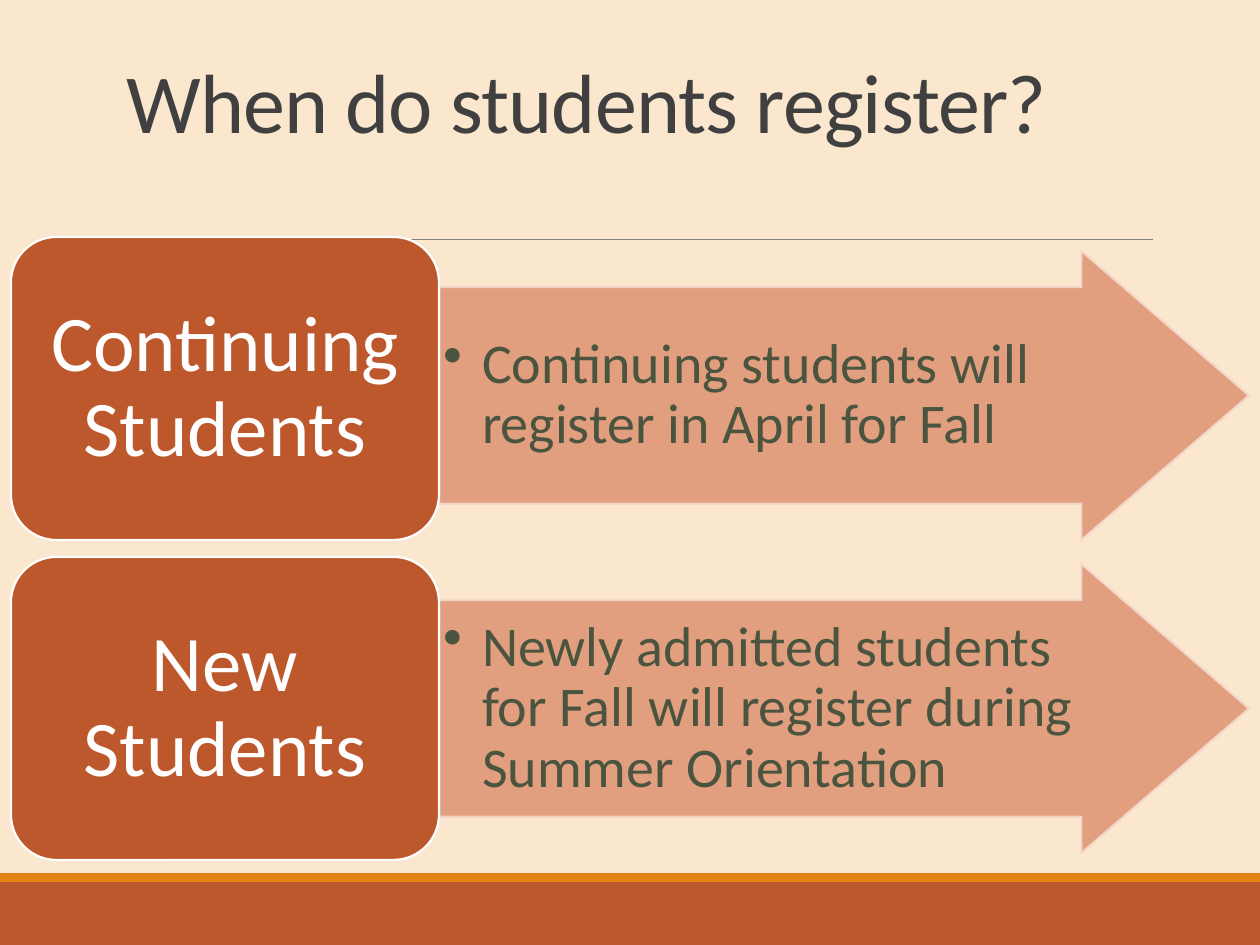
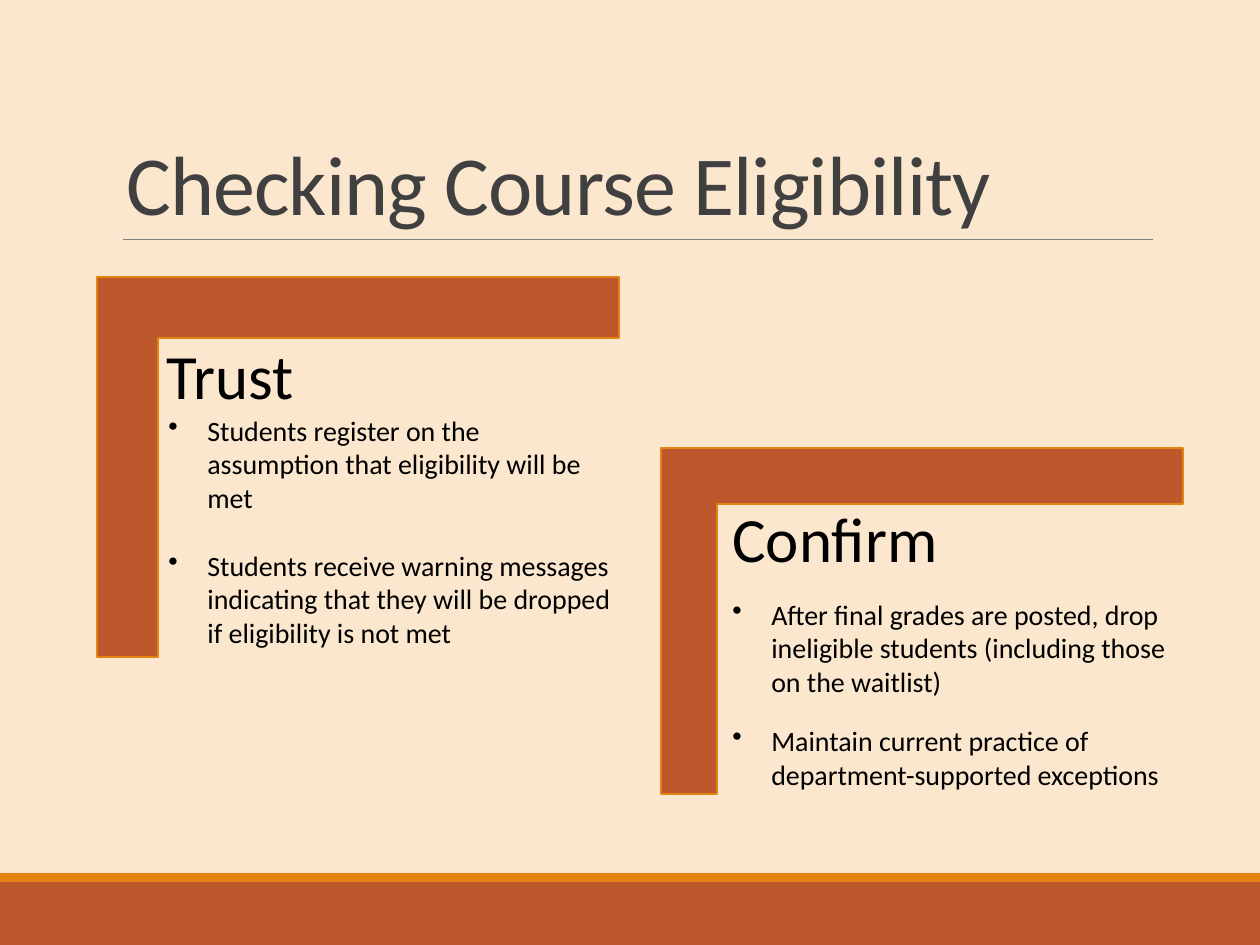
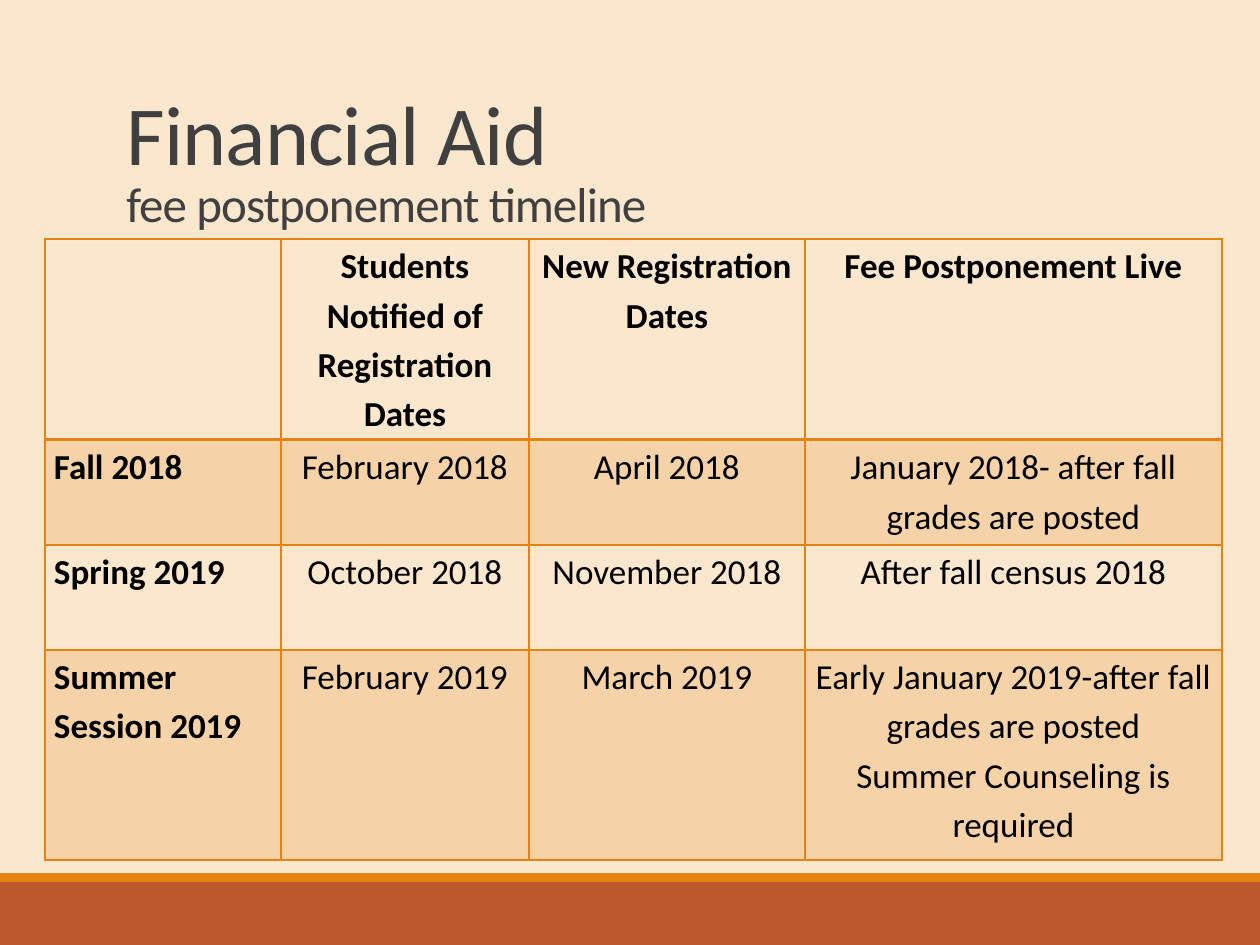
from dataclasses import dataclass

from lxml.etree import SubElement
from pptx import Presentation
from pptx.dml.color import RGBColor
from pptx.enum.shapes import MSO_CONNECTOR, MSO_SHAPE as Shape
from pptx.enum.text import MSO_ANCHOR as Anchor, PP_ALIGN as Align
from pptx.oxml import parse_xml
from pptx.oxml.ns import nsdecls, qn
from pptx.util import Emu, Pt

PX_PER_INCH = 126


def px(length):
    return Emu(round(length * 914400 / PX_PER_INCH))


@dataclass(frozen=True)
class Theme:
    font: str = "Calibri"
    paper: str = "FBE6CE"
    rust: str = "BD582C"
    orange: str = "E48312"
    rule: str = "808080"
    arrow: str = "E09878"
    arrow_edge: str = "F5D9CC"
    arrow_text: str = "4A543E"
    title: str = "404040"
    black: str = "000000"
    white: str = "FFFFFF"
    title_size: int = 48
    subtitle_size: int = 28
    label_size: int = 45
    arrow_size: int = 32
    heading_size: int = 36
    body_size: int = 16
    table_size: int = 20


def set_alpha(element, percent):
    for color in element.iter(qn("a:srgbClr")):
        SubElement(color, qn("a:alpha")).set("val", str(percent * 1000))


class Painter:
    def __init__(self, deck, theme):
        self.deck, self.theme, self.page = deck, theme, None

    # Slide frame: background, footer bands and title rule
    def new_page(self):
        theme = self.theme
        self.page = self.deck.slides.add_slide(self.deck.slide_layouts[6])
        self.page.background.fill.solid()
        self.page.background.fill.fore_color.rgb = RGBColor.from_string(theme.paper)
        self.shape(Shape.RECTANGLE, 0, 882, 1260, 63, theme.rust)
        self.shape(Shape.RECTANGLE, 0, 873, 1260, 9, theme.orange)
        self.line(123, 239, 1153, 239, theme.rule, 0.5)

    def shape(self, kind, left, top, width, height, fill, edge=None, adjust=()):
        shape = self.page.shapes.add_shape(kind, px(left), px(top), px(width), px(height))
        shape.shadow.inherit = False
        for index, value in enumerate(adjust):
            shape.adjustments[index] = value
        shape.fill.solid()
        shape.fill.fore_color.rgb = RGBColor.from_string(fill)
        if edge:
            shape.line.color.rgb = RGBColor.from_string(edge)
            shape.line.width = Pt(1.25)
        else:
            shape.line.fill.background()
        return shape

    def line(self, x1, y1, x2, y2, color, width):
        line = self.page.shapes.add_connector(
            MSO_CONNECTOR.STRAIGHT, px(x1), px(y1), px(x2), px(y2))
        line.line.color.rgb = RGBColor.from_string(color)
        line.line.width = Pt(width)
        SubElement(line.element.spPr, qn("a:effectLst"))

    # Text helpers
    def span(self, para, text, size, color, bold=False, tracking=0):
        span = para.add_run()
        span.text = text
        span.font.name, span.font.size, span.font.bold = self.theme.font, Pt(size), bold
        span.font.color.rgb = RGBColor.from_string(color)
        if tracking:
            span.font._element.set("spc", str(tracking))

    def bullet(self, para):
        indent = px(39)
        props = para._p.get_or_add_pPr()
        props.set("marL", str(indent))
        props.set("indent", str(-indent))
        SubElement(props, qn("a:buChar")).set("char", "•")

    def inset(self, frame, left, top, right, bottom):
        frame.margin_left, frame.margin_top = px(left), px(top)
        frame.margin_right, frame.margin_bottom = px(right), px(bottom)

    def text_box(self, left, top, width, height):
        box = self.page.shapes.add_textbox(px(left), px(top), px(width), px(height))
        box.text_frame.word_wrap = True
        return box.text_frame

    def title(self, text, subtitle=None, bottom=239):
        theme, top = self.theme, 39
        frame = self.text_box(114, top, 1040, bottom - top)
        frame.vertical_anchor = Anchor.BOTTOM
        para = frame.paragraphs[0]
        para.line_spacing = 0.85
        self.span(para, text, theme.title_size, theme.title, tracking=-50)
        if subtitle:
            para.add_line_break()
            self.span(para, subtitle, theme.subtitle_size, theme.title, tracking=-50)

    def heading(self, text, left, top):
        para = self.text_box(left, top, 260, 89).paragraphs[0]
        self.span(para, text, self.theme.heading_size, self.theme.black)

    def bullets(self, items, left, top, width, height, gap):
        frame = self.text_box(left, top, width, height)
        for index, item in enumerate(items):
            para = frame.add_paragraph() if index else frame.paragraphs[0]
            para.space_before = Pt(gap if index else 0)
            self.bullet(para)
            self.span(para, item, self.theme.body_size, self.theme.black)

    # A label card with an arrow pointing away from it
    def arrow_row(self, label, detail, card_top, arrow_top):
        theme = self.theme
        arrow = self.shape(Shape.RIGHT_ARROW, 439, arrow_top, 810, 289,
                           theme.arrow, theme.arrow_edge, (0.75, 0.58))
        set_alpha(arrow.element.spPr, 90)
        card = self.shape(Shape.ROUNDED_RECTANGLE, 11, card_top, 428, 303,
                          theme.rust, theme.white, (0.15,))
        self.inset(arrow.text_frame, 4, 0, 0, 0)
        self.inset(card.text_frame, 20, 13, 20, 13)
        for part, text, size, color, align in (
                (arrow, detail, theme.arrow_size, theme.arrow_text, Align.LEFT),
                (card, label, theme.label_size, theme.white, Align.CENTER)):
            part.text_frame.word_wrap = True
            part.text_frame.vertical_anchor = Anchor.MIDDLE
            para = part.text_frame.paragraphs[0]
            para.alignment, para.line_spacing = align, 0.9
            if part is arrow:
                self.bullet(para)
            self.span(para, text, size, color)

    # An L bracket, given by its box after the quarter turn
    def bracket(self, left, top, width, height):
        shift = (width - height) / 2
        corner = self.shape(Shape.CORNER, left + shift, top - shift, height, width,
                            self.theme.rust, self.theme.orange, (0.161, 0.161))
        corner.rotation = 90

    def table(self, rows, left, top, widths, heights):
        table = self.page.shapes.add_table(
            len(rows), len(widths), px(left), px(top),
            px(sum(widths)), px(sum(heights))).table
        table.first_row = table.horz_banding = False
        for column, width in zip(table.columns, widths):
            column.width = px(width)
        for row, height in zip(table.rows, heights):
            row.height = px(height)
        for r, row in enumerate(rows):
            for c, text in enumerate(row):
                self.cell(table.cell(r, c), text, r, c)

    def cell(self, cell, text, r, c):
        theme = self.theme
        self.inset(cell, 9, 0, 9, 0)
        props = cell._tc.get_or_add_tcPr()
        if r % 2:
            cell.fill.solid()
            cell.fill.fore_color.rgb = RGBColor.from_string(theme.orange)
            set_alpha(props, 20)
        else:
            cell.fill.background()
        for index, side in enumerate("LRTB"):
            heavy = (r, side) in ((0, "B"), (1, "T"))
            props.insert(index, parse_xml(
                f'<a:ln{side} {nsdecls("a")} w="{Pt(2 if heavy else 1)}"><a:solidFill>'
                f'<a:srgbClr val="{theme.orange}"/></a:solidFill></a:ln{side}>'))
        for index, line in enumerate(text.split("\n") if text else ()):
            frame = cell.text_frame
            para = frame.add_paragraph() if index else frame.paragraphs[0]
            para.alignment = Align.CENTER if c else Align.LEFT
            para.line_spacing = 1.15
            self.span(para, line, theme.table_size, theme.black, bold=r == 0 or c == 0)


def main():
    deck = Presentation()
    deck.slide_width, deck.slide_height = px(1260), px(945)
    painter = Painter(deck, Theme())

    # Registration times
    painter.new_page()
    painter.arrow_row("Continuing Students",
                      "Continuing students will register in April for Fall", 237, 251)
    painter.arrow_row("New Students",
                      "Newly admitted students for Fall will register during "
                      "Summer Orientation", 557, 564)
    painter.title("When do students register?", bottom=157)

    # Course eligibility
    painter.new_page()
    painter.title("Checking Course Eligibility")
    painter.bracket(97, 277, 522, 380)
    painter.bracket(661, 448, 522, 346)
    painter.heading("Trust", 154, 330)
    painter.heading("Confirm", 720, 493)
    painter.bullets(
        ("Students register on the assumption that eligibility will be met",
         "Students receive warning messages indicating that they will be dropped "
         "if eligibility is not met"), 156, 407, 471, 251, gap=19.5)
    painter.bullets(
        ("After final grades are posted, drop ineligible students "
         "(including those on the waitlist)",
         "Maintain current practice of department-supported exceptions"),
        720, 591, 464, 242, gap=14.6)

    # Financial aid timeline
    painter.new_page()
    painter.title("Financial Aid", "fee postponement timeline")
    painter.table((
        ("", "Students Notified of Registration Dates", "New Registration Dates",
         "Fee Postponement Live"),
        ("Fall 2018", "February 2018", "April 2018",
         "January 2018- after fall grades are posted"),
        ("Spring 2019", "October 2018", "November 2018", "After fall census 2018"),
        ("Summer Session 2019", "February 2019", "March 2019",
         "Early January 2019-after fall grades are posted\n"
         "Summer Counseling is required"),
    ), 45, 239, (236, 248, 276, 417), (201, 105, 105, 210))

    deck.save("out.pptx")


if __name__ == "__main__":
    main()
